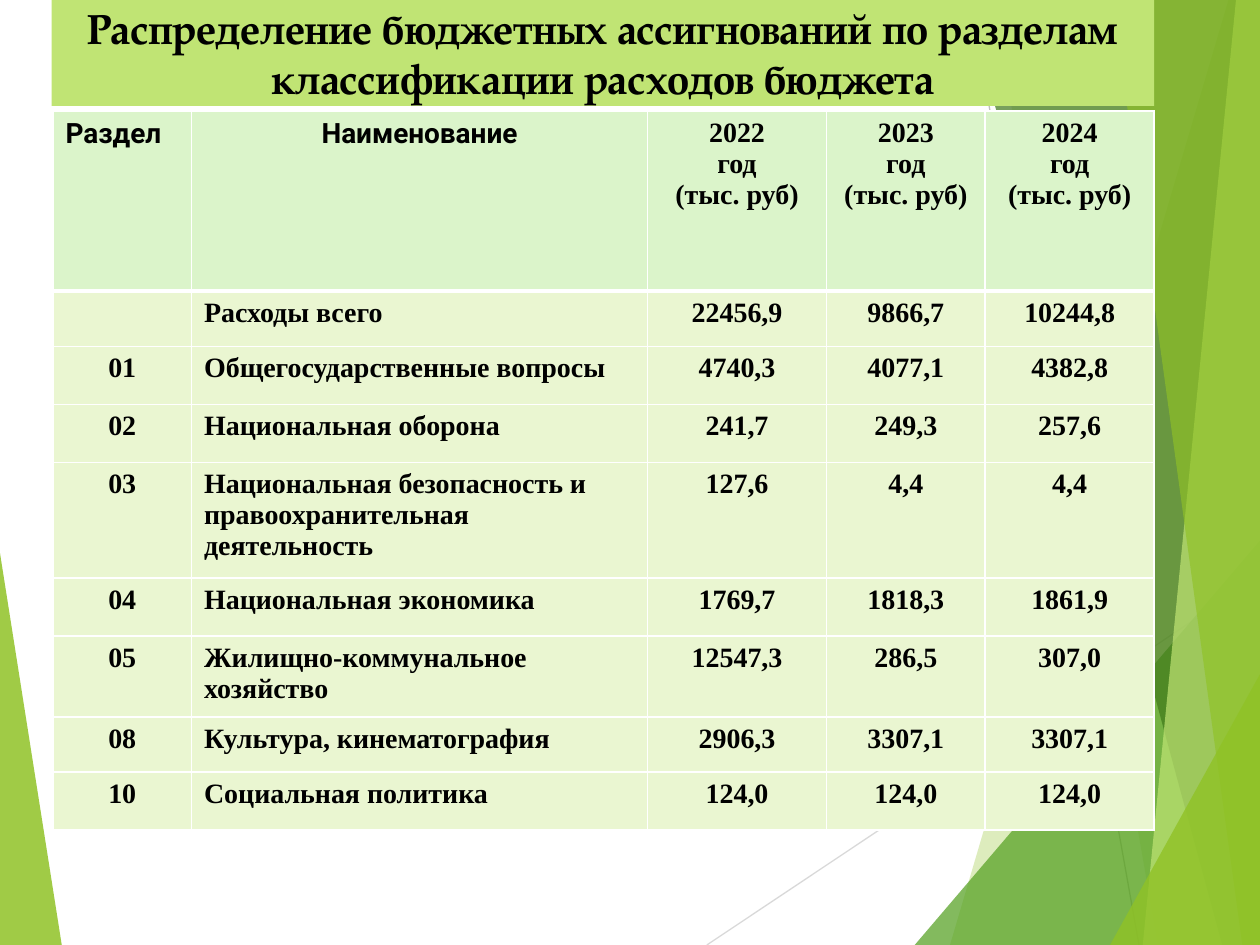
from lxml import etree
from pptx import Presentation, util as u
from pptx.dml.color import RGBColor
from pptx.enum import shapes, text
from pptx.oxml import ns

COLORS = {
    "lime": "90C226", "green": "54A021", "forest": "3F7819", "pale": "C0E474",
    "light_line": "D9D9D9", "gray_line": "BFBFBF", "white": "FFFFFF",
    "black": "000000", "header": "DBF4CA", "body": "EAF6D1",
}
CENTER, LEFT = text.PP_ALIGN.CENTER, text.PP_ALIGN.LEFT


def rgb(name):
    return RGBColor.from_string(COLORS[name])


class BudgetSlide:
    title_font = {"name": "TeX Gyre Pagella", "size": u.Pt(24), "bold": True}
    label_font = {"name": "Roboto", "size": u.Pt(16), "bold": True}
    cell_font = {"name": "Times New Roman", "size": u.Pt(16), "bold": True}

    def __init__(self, prs):
        self.slide = prs.slides.add_slide(prs.slide_layouts[5])
        self.shapes = self.slide.shapes

    def format_text(self, frame, font, align):
        for paragraph in frame.paragraphs:
            paragraph.alignment = align
            for key, value in font.items():
                setattr(paragraph.font, key, value)
            paragraph.font.color.rgb = rgb("black")

    def facet(self, color, opacity, points):
        corners = [(u.Inches(x), u.Inches(y)) for x, y in points]
        builder = self.shapes.build_freeform(*corners[0])
        builder.add_line_segments(corners[1:], close=True)
        shape = builder.convert_to_shape()
        shape.shadow.inherit = False
        shape.line.fill.background()
        shape.fill.solid()
        shape.fill.fore_color.rgb = rgb(color)
        tint = shape.fill._xPr.find(".//" + ns.qn("a:srgbClr"))
        etree.SubElement(tint, ns.qn("a:alpha"), val=str(opacity * 1000))

    def line(self, color, *ends):
        line = self.shapes.add_connector(
            shapes.MSO_CONNECTOR.STRAIGHT, *[u.Inches(v) for v in ends])
        line.line.color.rgb = rgb(color)
        line.line.width = u.Pt(0.75)
        etree.SubElement(line._element.spPr, ns.qn("a:effectLst"))

    def title(self, words, *box):
        title = self.shapes.title
        for key, value in zip(("left", "top", "width", "height"), box):
            setattr(title, key, u.Inches(value))
        title.fill.solid()
        title.fill.fore_color.rgb = rgb("pale")
        frame = title.text_frame
        frame.text = words
        frame.word_wrap = True
        frame.auto_size = text.MSO_AUTO_SIZE.NONE
        frame.vertical_anchor = text.MSO_ANCHOR.MIDDLE
        self.format_text(frame, self.title_font, CENTER)
        # Bring the title band in front of the facets
        self.shapes._spTree.append(title._element)

    def borders(self, cell, widths):
        props = cell._tc.get_or_add_tcPr()
        for place, (side, width) in enumerate(widths.items()):
            edge = etree.Element(ns.qn("a:ln" + side), w=str(u.Pt(width)))
            fill = etree.SubElement(edge, ns.qn("a:solidFill"))
            etree.SubElement(fill, ns.qn("a:srgbClr"), val=COLORS["white"])
            props.insert(place, edge)

    def table(self, rows, left, top, widths, heights):
        table = self.shapes.add_table(
            len(rows), len(widths), u.Inches(left), u.Inches(top),
            u.Inches(sum(widths)), u.Inches(sum(heights))).table
        table.horz_banding = False
        for column, width in zip(table.columns, widths):
            column.width = u.Inches(width)
        for row, height in zip(table.rows, heights):
            row.height = u.Inches(height)
        for r, values in enumerate(rows):
            for c, value in enumerate(values):
                cell = table.cell(r, c)
                cell.text = value
                cell.fill.solid()
                cell.fill.fore_color.rgb = rgb("body" if r else "header")
                self.borders(cell, {"L": 1, "R": 1, "T": 3 if r == 1 else 1,
                                    "B": 1 if r else 3})
                font = self.label_font if r == 0 and c < 2 else self.cell_font
                flush_left = (c == 1) if r else (c == 0)
                self.format_text(cell.text_frame, font,
                                 LEFT if flush_left else CENTER)


# Spending by section: code, name, three years
YEARS = [f"{year}\nгод\n(тыс. руб)" for year in (2022, 2023, 2024)]
SPENDING = [
    ("Раздел", "Наименование", *YEARS),
    ("", "Расходы всего", "22456,9", "9866,7", "10244,8"),
    ("01", "Общегосударственные вопросы", "4740,3", "4077,1", "4382,8"),
    ("02", "Национальная оборона", "241,7", "249,3", "257,6"),
    ("03", "Национальная безопасность и правоохранительная деятельность",
     "127,6", "4,4", "4,4"),
    ("04", "Национальная экономика", "1769,7", "1818,3", "1861,9"),
    ("05", "Жилищно-коммунальное хозяйство", "12547,3", "286,5", "307,0"),
    ("08", "Культура, кинематография", "2906,3", "3307,1", "3307,1"),
    ("10", "Социальная политика", "124,0", "124,0", "124,0"),
]

# Facets on the right edge: colour, opacity, corners left of the edge
FACETS = [
    ("pale", 0, []),
]
RIGHT_FACETS = [
    ("lime", 30, [(9.75, 0), (7.54, 7.5)]),
    ("lime", 20, [(7.88, 0), (9.19, 7.5)]),
    ("green", 72, [(10, 4.29), (7.26, 7.5)]),
    ("forest", 70, [(7.67, 0), (9.7, 7.5)]),
    ("pale", 70, [(9.81, 0), (9.07, 7.5)]),
    ("lime", 65, [(8.83, 0), (9.86, 7.5)]),
    ("lime", 80, [(10, 5.35), (8.81, 7.5)]),
]
del FACETS


def main():
    prs = Presentation()
    prs.slide_width, prs.slide_height = u.Inches(10), u.Inches(7.5)
    budget = BudgetSlide(prs)

    # Background facets and thin lines
    budget.facet("lime", 85, [(0, 4.39), (0.49, 7.5), (0, 7.5)])
    budget.line("light_line", 5.61, 7.5, 10, 4.57)
    budget.line("gray_line", 7.7, 0, 9.04, 7.5)
    for color, opacity, (upper, lower) in RIGHT_FACETS:
        edge = [(10, 7.5)] + ([(10, 0)] if upper[1] == 0 else [])
        budget.facet(color, opacity, [upper, lower, *edge])

    # Table and title band
    budget.table(SPENDING, 0.42, 0.88, [1.1, 3.62, 1.42, 1.26, 1.34],
                 [1.43, 0.44, 0.46, 0.46, 0.92, 0.46, 0.64, 0.44, 0.46])
    budget.title("Распределение бюджетных ассигнований по разделам "
                 "классификации расходов бюджета", 0.41, 0, 8.75, 0.84)
    prs.save("out.pptx")


if __name__ == "__main__":
    main()
